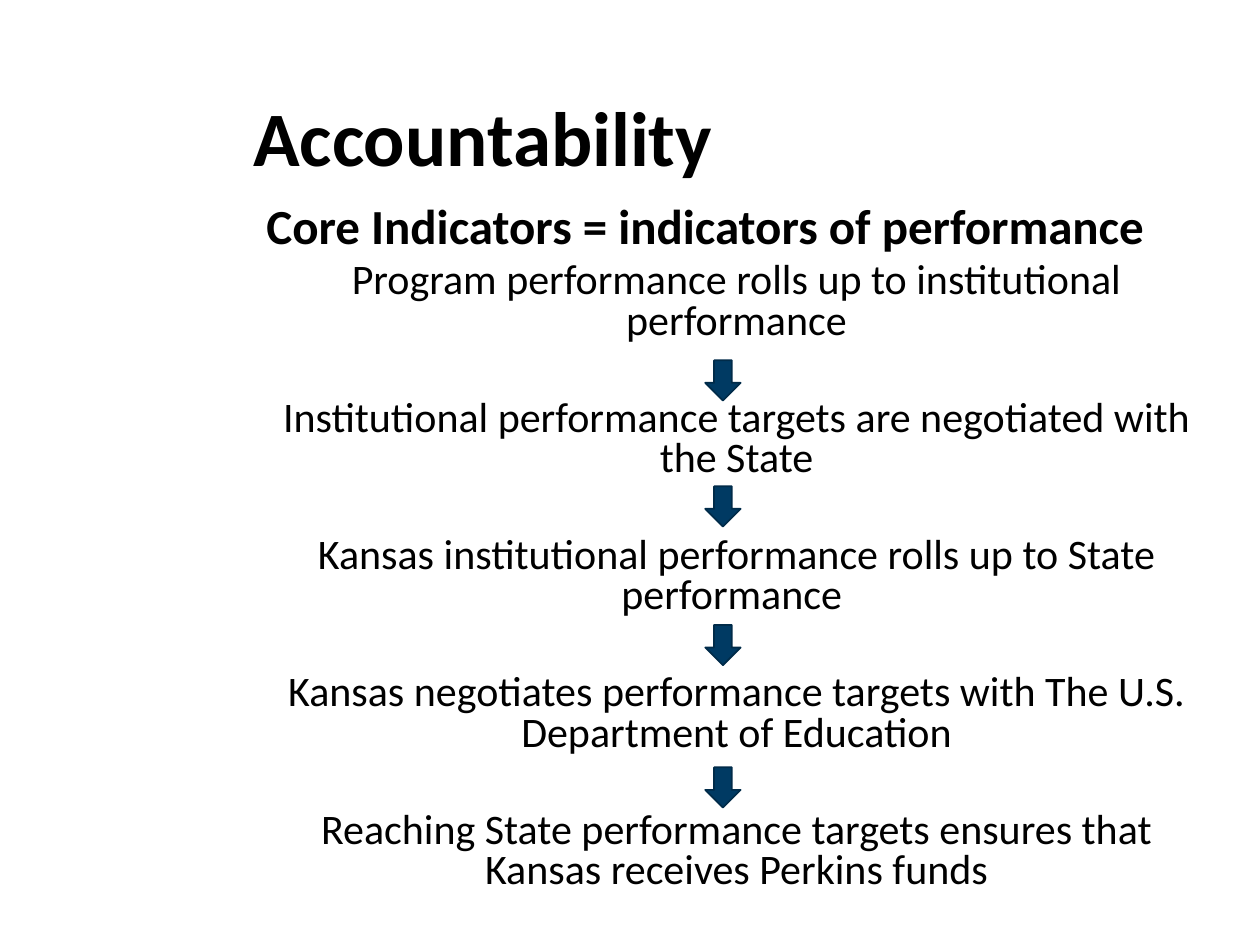
import pptx
import pptx.dml.color
import pptx.enum.shapes
import pptx.enum.text
import pptx.oxml.ns
import lxml.etree
from pptx.util import Pt

BLACK = pptx.dml.color.RGBColor(0x00, 0x00, 0x00)
NAVY = pptx.dml.color.RGBColor(0x00, 0x3A, 0x63)
DARK_NAVY = pptx.dml.color.RGBColor(0x00, 0x2B, 0x49)

TITLE = "Accountability"
HEADING = "Core Indicators = indicators of performance"
STEPS = [
    "Program performance rolls up to institutional performance",
    "Institutional performance targets are negotiated with the State",
    "Kansas institutional performance rolls up to State performance ",
    "Kansas negotiates performance targets with The U.S. Department of Education",
    "Reaching State performance targets ensures that Kansas receives Perkins funds",
]
ARROW_TOPS = [205.9, 277.9, 357.1, 438.5]


def place(shape, left, top, width, height):
    shape.left, shape.top = Pt(left), Pt(top)
    shape.width, shape.height = Pt(width), Pt(height)


def format_paragraph(paragraph, size, bold, alignment, line_spacing, space_before=0):
    paragraph.alignment = alignment
    paragraph.line_spacing = line_spacing
    paragraph.space_before = Pt(space_before)
    paragraph.space_after = Pt(0)
    font = paragraph.font
    font.name, font.size, font.bold = "Calibri", Pt(size), bold
    font.color.rgb = BLACK


def remove_bullet(paragraph, left_margin):
    properties = paragraph._p.get_or_add_pPr()
    properties.set("marL", str(Pt(left_margin)))
    properties.set("indent", "0")
    lxml.etree.SubElement(properties, pptx.oxml.ns.qn("a:buNone"))


def fill_title(title):
    place(title, 137.5, 28.8, 550.8, 104.4)
    frame = title.text_frame
    frame.text = TITLE
    frame.auto_size = pptx.enum.text.MSO_AUTO_SIZE.NONE
    frame.vertical_anchor = pptx.enum.text.MSO_ANCHOR.MIDDLE
    format_paragraph(frame.paragraphs[0], 44, True, pptx.enum.text.PP_ALIGN.LEFT, 0.9)


def fill_body(body):
    place(body, 106.6, 114.5, 592.6, 416.9)
    frame = body.text_frame
    frame.auto_size = pptx.enum.text.MSO_AUTO_SIZE.NONE
    center = pptx.enum.text.PP_ALIGN.CENTER
    heading = frame.paragraphs[0]
    heading.text = HEADING
    remove_bullet(heading, 0)
    format_paragraph(heading, 28, True, center, 0.8)
    for index, step in enumerate(STEPS):
        paragraph = frame.add_paragraph()
        paragraph.text = step
        paragraph.level = 1
        remove_bullet(paragraph, 36)
        # Later steps leave room for the arrow above them.
        space_before = 32.4 if index else 5
        format_paragraph(paragraph, 24, False, center, 0.8, space_before)


def add_down_arrow(slide, top):
    arrow = slide.shapes.add_shape(
        pptx.enum.shapes.MSO_SHAPE.DOWN_ARROW, Pt(403), Pt(top), Pt(20.2), Pt(23))
    arrow.shadow.inherit = False
    arrow.fill.solid()
    arrow.fill.fore_color.rgb = NAVY
    arrow.line.color.rgb = DARK_NAVY
    arrow.line.width = Pt(1)


def main():
    presentation = pptx.Presentation()
    presentation.slide_width, presentation.slide_height = Pt(720), Pt(540)
    slide = presentation.slides.add_slide(presentation.slide_layouts[1])
    fill_title(slide.shapes.title)
    fill_body(slide.placeholders[1])
    for top in ARROW_TOPS:
        add_down_arrow(slide, top)
    presentation.save("out.pptx")


if __name__ == "__main__":
    main()
